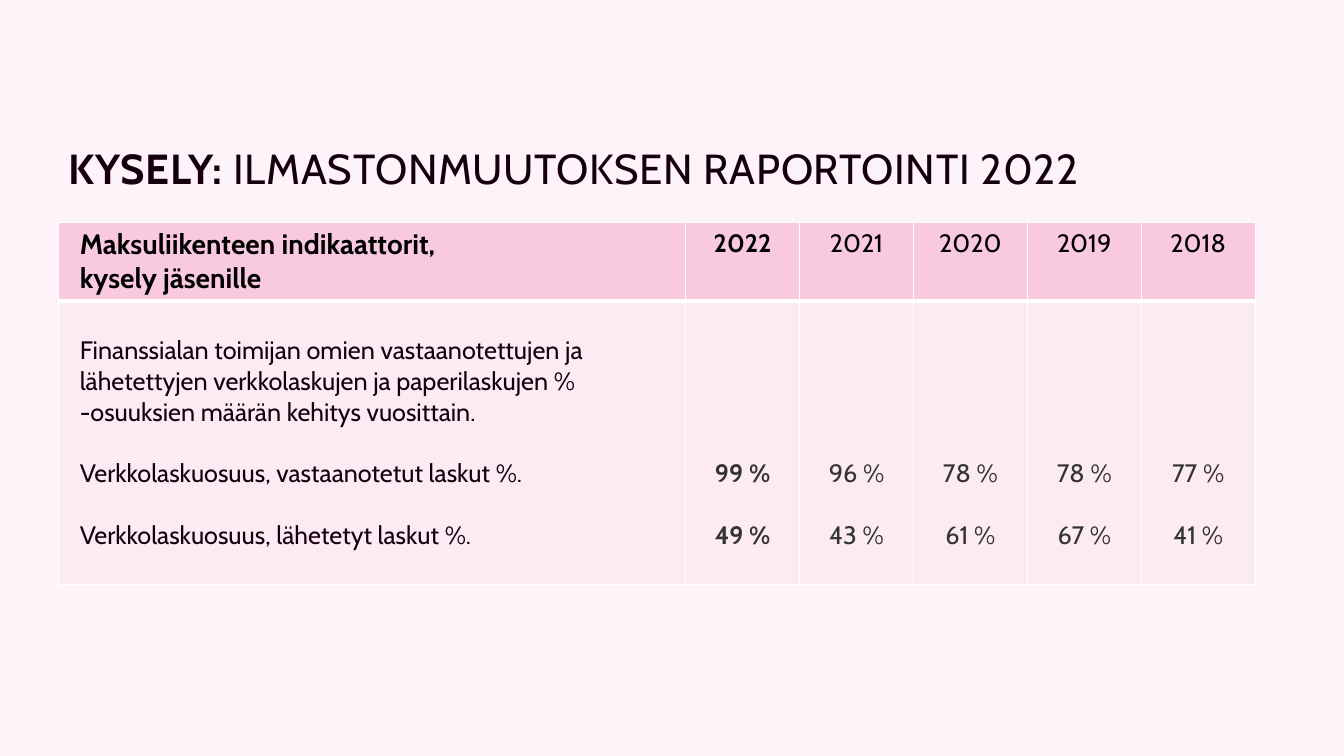
"""Build a slide with a table of e-invoicing shares by year."""
import lxml.etree
import pptx
import pptx.dml.color
import pptx.enum.text
import pptx.oxml.ns
import pptx.util

Cm = pptx.util.Cm
Pt = pptx.util.Pt

TITLE = [("KYSELY:", True), (" ILMASTONMUUTOKSEN RAPORTOINTI 2022", False)]
HEADING = "Maksuliikenteen indikaattorit,\vkysely jäsenille"
INTRO = ("Finanssialan toimijan omien vastaanotettujen ja lähetettyjen "
         "verkkolaskujen ja paperilaskujen % -osuuksien määrän kehitys vuosittain.")
INDICATORS = [
    "Verkkolaskuosuus, vastaanotetut laskut %.",
    "Verkkolaskuosuus, lähetetyt laskut %.",
]
SHARES = {
    "2022": ["99 %", "49 %"],
    "2021": ["96 %", "43 %"],
    "2020": ["78 %", "61 %"],
    "2019": ["78 %", "67 %"],
    "2018": ["77 %", "41 %"],
}
THEME = {
    "font": "Cabin", "back": "FEF3F9", "head": "F8C9DF", "body": "FCEBF3",
    "rule": "FFFFFF", "ink": "17000D", "black": "000000", "value": "333333",
    "title_pt": 30, "head_pt": 20, "text_pt": 18, "gap_pt": 21.9,
    "thin_pt": 1, "thick_pt": 3,
}
LEFT, TOP = 1.48, 5.61
LABEL_W, YEAR_W = 15.8, 2.87
HEAD_H, BODY_H = 1.98, 7.14
SIDE_PAD, HEAD_PAD, BODY_PAD = 0.53, 0.13, 0.86


def rgb(key):
    return pptx.dml.color.RGBColor.from_string(THEME[key])


def style(font, size, color, bold):
    font.name, font.size, font.bold = THEME["font"], Pt(THEME[size]), bold
    font.color.rgb = rgb(color)


def add_borders(cell, top, bottom):
    qn = pptx.oxml.ns.qn
    tcPr = cell._tc.get_or_add_tcPr()
    for side, width in (("L", "thin_pt"), ("R", "thin_pt"), ("T", top), ("B", bottom)):
        ln = lxml.etree.SubElement(tcPr, qn(f"a:ln{side}"), w=str(Pt(THEME[width])))
        fill = lxml.etree.SubElement(ln, qn("a:solidFill"))
        lxml.etree.SubElement(fill, qn("a:srgbClr"), val=THEME["rule"])


def fill_cell(cell, lines, size, color, bold, is_head, is_label):
    add_borders(cell, "thin_pt" if is_head else "thick_pt",
                "thick_pt" if is_head else "thin_pt")
    cell.fill.solid()
    cell.fill.fore_color.rgb = rgb("head" if is_head else "body")
    cell.margin_left = cell.margin_right = Cm(SIDE_PAD)
    cell.margin_top = cell.margin_bottom = Cm(HEAD_PAD if is_head else BODY_PAD)
    anchor = pptx.enum.text.MSO_ANCHOR
    cell.vertical_anchor = anchor.TOP if is_head or is_label else anchor.BOTTOM
    align = pptx.enum.text.PP_ALIGN
    tf = cell.text_frame
    for i, line in enumerate(lines):
        p = tf.add_paragraph() if i else tf.paragraphs[0]
        p.text = line
        p.alignment = align.LEFT if is_label else align.CENTER
        if i:
            p.space_before = Pt(THEME["gap_pt"])
        style(p.font, size, color, bold)


def add_title(s):
    tf = s.shapes.add_textbox(Cm(LEFT), Cm(2.46), Cm(29.21), Cm(3.68)).text_frame
    tf.word_wrap = True
    tf.vertical_anchor = pptx.enum.text.MSO_ANCHOR.MIDDLE
    p = tf.paragraphs[0]
    p.line_spacing = 0.9
    for text, bold in TITLE:
        r = p.add_run()
        r.text = text
        style(r.font, "title_pt", "ink", bold)
        r.font._element.set("spc", "50")


def add_shares(s):
    widths = [LABEL_W] + [YEAR_W] * len(SHARES)
    table = s.shapes.add_table(2, len(widths), Cm(LEFT), Cm(TOP),
                               Cm(sum(widths)), Cm(HEAD_H + BODY_H)).table
    for column, width in zip(table.columns, widths):
        column.width = Cm(width)
    table.rows[0].height, table.rows[1].height = Cm(HEAD_H), Cm(BODY_H)
    fill_cell(table.cell(0, 0), [HEADING], "head_pt", "black", True, True, True)
    fill_cell(table.cell(1, 0), [INTRO] + INDICATORS, "text_pt", "ink", False, False, True)
    for c, (year, values) in enumerate(SHARES.items(), 1):
        latest = c == 1
        fill_cell(table.cell(0, c), [year], "text_pt", "black", latest, True, False)
        fill_cell(table.cell(1, c), values, "text_pt", "value", latest, False, False)


def main():
    prs = pptx.Presentation()
    prs.slide_width, prs.slide_height = Cm(33.87), Cm(19.05)
    s = prs.slides.add_slide(prs.slide_layouts[6])
    s.background.fill.solid()
    s.background.fill.fore_color.rgb = rgb("back")
    add_title(s)
    add_shares(s)
    prs.save("out.pptx")


if __name__ == "__main__":
    main()
